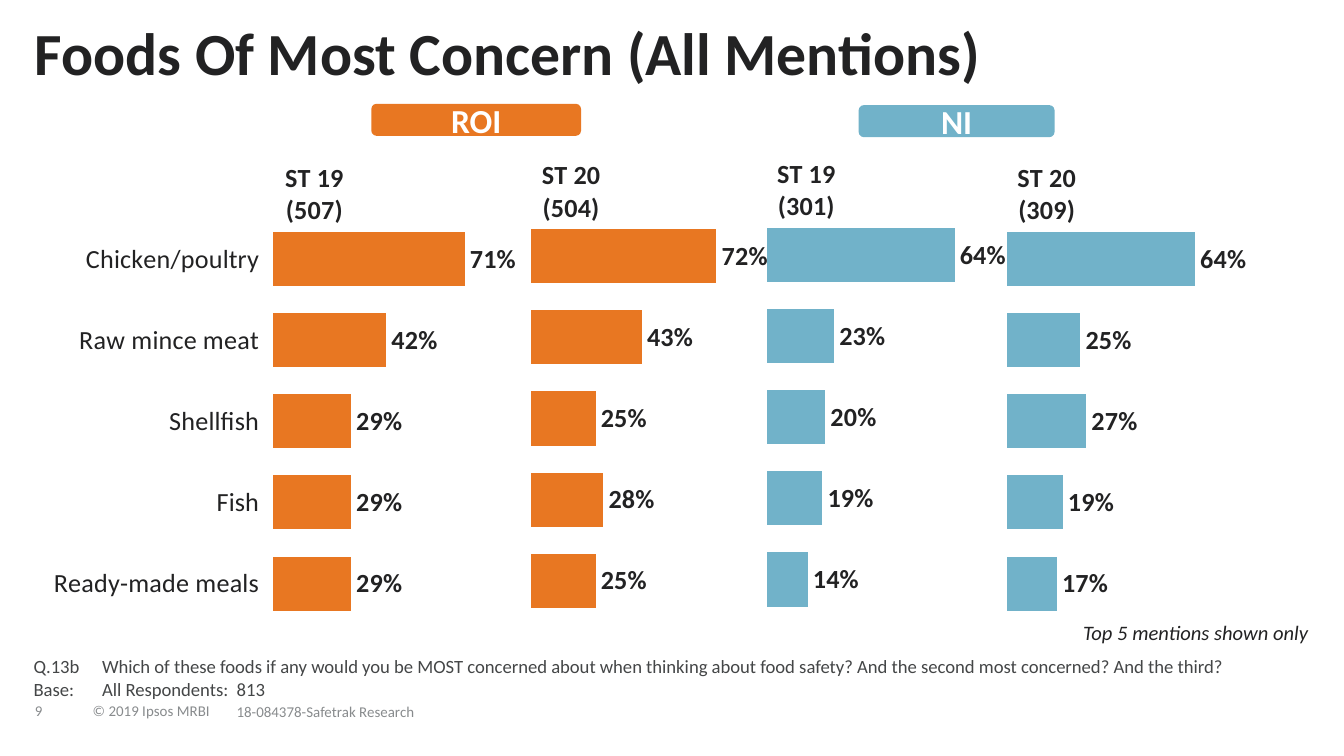
from dataclasses import dataclass

from pptx import Presentation
from pptx.chart.data import CategoryChartData as ChartData
from pptx.dml.color import RGBColor
from pptx.enum.chart import XL_CHART_TYPE as Kind
from pptx.enum.chart import XL_LABEL_POSITION as Spot
from pptx.enum.chart import XL_TICK_LABEL_POSITION as TickPos
from pptx.enum.chart import XL_TICK_MARK as Tick
from pptx.enum.shapes import MSO_SHAPE as Shape
from pptx.enum.text import MSO_ANCHOR as Anchor
from pptx.enum.text import PP_ALIGN as Align
from pptx.oxml import parse_xml
from pptx.oxml.ns import nsdecls
from pptx.util import Pt

FONT = "Calibri"
INK = RGBColor(0x22, 0x22, 0x23)
DARK = RGBColor(0x44, 0x46, 0x47)
GREY = RGBColor(0x88, 0x8B, 0x8D)
WHITE = RGBColor(0xFF, 0xFF, 0xFF)
ORANGE = RGBColor(0xE8, 0x77, 0x22)
BLUE = RGBColor(0x71, 0xB2, 0xC9)

FOODS = ["Chicken/poultry", "Raw mince meat", "Shellfish", "Fish", "Ready-made meals"]
PLOT = {"x": 0.436, "y": 0.158, "w": 0.33, "h": 0.801}


@dataclass
class Box:
    left: float
    top: float
    width: float
    height: float

    def lengths(self) -> list:
        return [Pt(n) for n in (self.left, self.top, self.width, self.height)]


@dataclass
class Wave:
    """One survey wave: a bar chart of the share naming each food."""
    name: str
    base: int
    box: Box
    color: RGBColor
    top: float
    shares: list[float]
    named: bool = False


@dataclass
class Region:
    name: str
    box: Box
    color: RGBColor


WAVES = [
    Wave("ST 20", 309, Box(393.8, 74.2, 334, 271.4), BLUE, 0.7,
         [0.64, 0.25, 0.27, 0.19, 0.17]),
    Wave("ST 19", 507, Box(-7.2, 74.2, 351.4, 271.4), ORANGE, 0.8,
         [0.71, 0.42, 0.29, 0.29, 0.29], named=True),
    Wave("ST 20", 504, Box(139, 72.7, 334, 271.4), ORANGE, 0.8,
         [0.72, 0.43, 0.25, 0.28, 0.25]),
    Wave("ST 19", 301, Box(265, 72, 334, 271.4), BLUE, 0.7,
         [0.64, 0.23, 0.2, 0.19, 0.14]),
]
REGIONS = [
    Region("ROI", Box(198.9, 55.6, 112.4, 17.2), ORANGE),
    Region("NI", Box(460, 56.3, 105, 17.2), BLUE),
]


def style(font, size: float, color: RGBColor, bold=False, italic=False) -> None:
    font.name, font.size, font.bold, font.italic = FONT, Pt(size), bold, italic
    font.color.rgb = color


def write(frame, text: str, *, size: float, color: RGBColor, bold=False, italic=False,
          align=Align.LEFT, anchor=Anchor.TOP, wrap=True, line=1.0, hang=0.0) -> None:
    """Fill a text frame, one paragraph per line of text."""
    frame.margin_left = frame.margin_right = 0
    frame.margin_top = frame.margin_bottom = 0
    frame.word_wrap, frame.vertical_anchor = wrap, anchor
    for i, part in enumerate(text.split("\n")):
        para = frame.add_paragraph() if i else frame.paragraphs[0]
        para.alignment, para.line_spacing = align, line
        if hang:
            props = para._p.get_or_add_pPr()
            props.set("marL", str(Pt(hang)))
            props.set("indent", str(-Pt(hang)))
        run = para.add_run()
        run.text = part
        style(run.font, size, color, bold, italic)


def label(slide, box: Box, text: str, **form) -> None:
    write(slide.shapes.add_textbox(*box.lengths()).text_frame, text, **form)


def badge(slide, region: Region) -> None:
    shape = slide.shapes.add_shape(Shape.ROUNDED_RECTANGLE, *region.box.lengths())
    shape.shadow.inherit = False
    shape.fill.solid()
    shape.fill.fore_color.rgb = region.color
    shape.line.fill.background()
    write(shape.text_frame, region.name, size=18, color=WHITE, bold=True,
          align=Align.CENTER, anchor=Anchor.MIDDLE)


def fix_plot(chart) -> None:
    """Pin the inner plot area, so that bars line up across charts."""
    area = chart._chartSpace.chart.plotArea
    for old in area.findall("{*}layout"):
        area.remove(old)
    modes = '<c:xMode val="edge"/><c:yMode val="edge"/>'
    sizes = "".join(f'<c:{k} val="{v}"/>' for k, v in PLOT.items())
    area.insert(0, parse_xml(
        f'<c:layout {nsdecls("c")}><c:manualLayout><c:layoutTarget val="inner"/>'
        f"{modes}{sizes}</c:manualLayout></c:layout>"))


def draw_wave(slide, wave: Wave) -> None:
    title = f"{wave.name}\n({wave.base})"
    data = ChartData(number_format="0%")
    data.categories = FOODS if wave.named else ["1", "2", "3", "4", "5"]
    data.add_series(title, wave.shares)
    chart = slide.shapes.add_chart(Kind.BAR_CLUSTERED, *wave.box.lengths(), data).chart
    style(chart.font, 14, INK, bold=True)
    chart.has_legend = False
    write(chart.chart_title.text_frame, title, size=14, color=INK, bold=True,
          align=Align.CENTER)

    foods, scale = chart.category_axis, chart.value_axis
    foods.reverse_order = True
    foods.visible = wave.named
    if wave.named:
        foods.major_tick_mark = foods.minor_tick_mark = Tick.NONE
        foods.tick_label_position = TickPos.LOW
        foods.format.line.fill.background()
        style(foods.tick_labels.font, 14, INK)
    scale.visible = scale.has_major_gridlines = False
    scale.minimum_scale, scale.maximum_scale = 0, wave.top

    plot = chart.plots[0]
    plot.gap_width, plot.vary_by_categories = 50, False
    fill = plot.series[0].format.fill
    fill.solid()
    fill.fore_color.rgb = wave.color
    plot.has_data_labels = True
    marks = plot.data_labels
    marks.show_value, marks.position = True, Spot.OUTSIDE_END
    marks.number_format, marks.number_format_is_linked = "0%", False
    style(marks.font, 14, INK, bold=True)
    fix_plot(chart)


def main() -> None:
    deck = Presentation()
    deck.slide_width, deck.slide_height = Pt(720), Pt(405)
    slide = deck.slides.add_slide(deck.slide_layouts[6])

    foot = {"size": 8, "color": GREY, "anchor": Anchor.MIDDLE, "line": 0.85}
    label(slide, Box(18.7, 372.2, 24.5, 18.7), "9", **foot)
    label(slide, Box(49.7, 375.1, 66, 13), "© 2019 Ipsos MRBI", **foot)
    label(slide, Box(126.7, 370.8, 195.8, 22.3), "18-084378-Safetrak Research", **foot)

    for wave in WAVES:
        draw_wave(slide, wave)
    label(slide, Box(18.7, 13, 681, 34.6), "Foods Of Most Concern (All Mentions)",
          size=32, color=INK, bold=True, line=0.9)
    label(slide, Box(18, 326.9, 653, 48.2),
          "Q.13b\tWhich of these foods if any would you be MOST concerned about when "
          "thinking about food safety? And the second most concerned? And the third?\n"
          "Base:\tAll Respondents:  813",
          size=10, color=DARK, anchor=Anchor.BOTTOM, hang=36.7)
    label(slide, Box(580.3, 331.9, 122.4, 13.7), "Top 5 mentions shown only",
          size=11, color=INK, italic=True, wrap=False)
    for region in REGIONS:
        badge(slide, region)
    deck.save("out.pptx")


if __name__ == "__main__":
    main()
